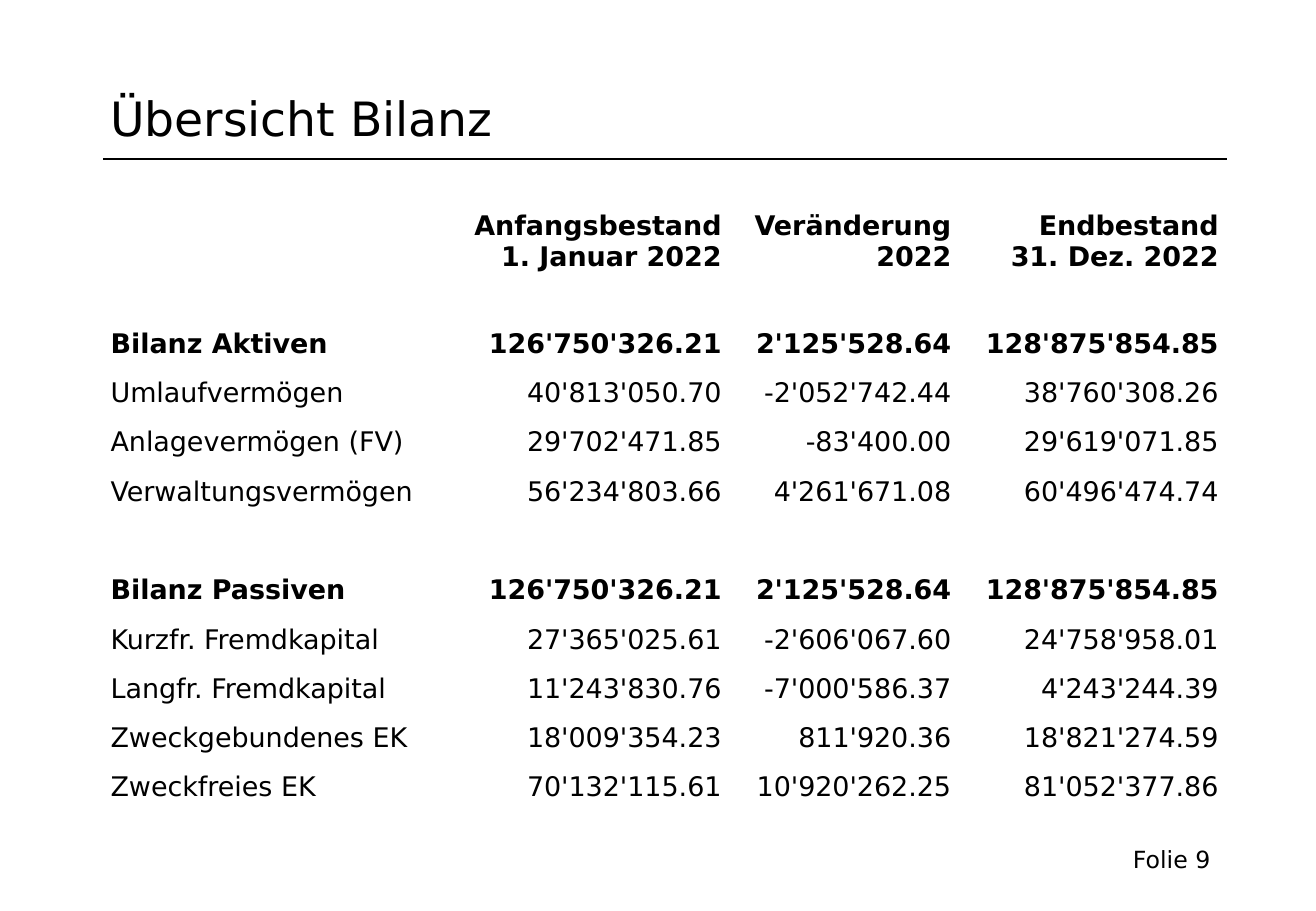
import pptx
import pptx.dml.color
import pptx.enum.shapes
import pptx.enum.text
import pptx.util
from lxml import etree

Inches = pptx.util.Inches
Align = pptx.enum.text.PP_ALIGN
Anchor = pptx.enum.text.MSO_ANCHOR

THEME = {
    "font": "DejaVu Sans",
    "ink": pptx.dml.color.RGBColor(0x00, 0x00, 0x00),
    "paper": pptx.dml.color.RGBColor(0xFF, 0xFF, 0xFF),
    "title": 28,
    "table": 16,
    "spacer": 14,
    "footer": 14,
}

LEFT, RIGHT = 0.81, 10.06
COLUMNS = [2.87, 2.36, 1.89, 2.2]
HEADER_ROW, SPACER_ROW, BODY_ROW = 0.62, 0.34, 0.406
TABLE_TOP = 1.68

HEADER = ["", "Anfangsbestand\n1. Januar 2022", "Veränderung\n2022", "Endbestand\n31. Dez. 2022"]
EMPTY = [""] * len(COLUMNS)
BALANCE = [
    HEADER,
    EMPTY,
    ["Bilanz Aktiven", "126'750'326.21", "2'125'528.64", "128'875'854.85"],
    ["Umlaufvermögen", "40'813'050.70", "-2'052'742.44", "38'760'308.26"],
    ["Anlagevermögen (FV)", "29'702'471.85", "-83'400.00", "29'619'071.85"],
    ["Verwaltungsvermögen", "56'234'803.66", "4'261'671.08", "60'496'474.74"],
    EMPTY,
    ["Bilanz Passiven", "126'750'326.21", "2'125'528.64", "128'875'854.85"],
    ["Kurzfr. Fremdkapital", "27'365'025.61", "-2'606'067.60", "24'758'958.01"],
    ["Langfr. Fremdkapital", "11'243'830.76", "-7'000'586.37", "4'243'244.39"],
    ["Zweckgebundenes EK", "18'009'354.23", "811'920.36", "18'821'274.59"],
    ["Zweckfreies EK", "70'132'115.61", "10'920'262.25", "81'052'377.86"],
]


def write(frame, text, size, align=Align.LEFT, bold=False):
    """Fill a text frame, one paragraph per line, in the theme's font."""
    frame.text = text
    for para in frame.paragraphs:
        para.alignment = align
        para.font.name = THEME["font"]
        para.font.size = pptx.util.Pt(size)
        para.font.bold = bold
        para.font.color.rgb = THEME["ink"]


def add_text(page, left, top, width, height, text, size, align=Align.LEFT):
    box = page.shapes.add_textbox(Inches(left), Inches(top), Inches(width), Inches(height))
    box.text_frame.word_wrap = True
    box.text_frame.vertical_anchor = Anchor.MIDDLE
    write(box.text_frame, text, size, align)


deck = pptx.Presentation()
deck.slide_width, deck.slide_height = Inches(10.83), Inches(7.5)
page = deck.slides.add_slide(deck.slide_layouts[6])

# Title and rule
rule = page.shapes.add_connector(
    pptx.enum.shapes.MSO_CONNECTOR.STRAIGHT,
    Inches(0.85), Inches(1.31), Inches(10.1), Inches(1.31),
)
rule.line.color.rgb = THEME["ink"]
rule.line.width = pptx.util.Pt(0.75)
etree.SubElement(rule.line._get_or_add_ln().getparent(), pptx.oxml.ns.qn("a:effectLst"))
add_text(page, LEFT, 0.68, 6.35, 0.58, "Übersicht Bilanz", THEME["title"])

# Balance table
heights = [HEADER_ROW, SPACER_ROW] + [BODY_ROW] * (len(BALANCE) - 2)
table = page.shapes.add_table(
    len(BALANCE), len(COLUMNS),
    Inches(LEFT), Inches(TABLE_TOP), Inches(sum(COLUMNS)), Inches(sum(heights)),
).table
table.horz_banding = False
for column, width in zip(table.columns, COLUMNS):
    column.width = Inches(width)

for row, height, entries in zip(table.rows, heights, BALANCE):
    row.height = Inches(height)
    bold = entries is HEADER or entries[0].startswith("Bilanz")
    size = THEME["spacer"] if entries is EMPTY else THEME["table"]
    for index, (cell, entry) in enumerate(zip(row.cells, entries)):
        cell.fill.solid()
        cell.fill.fore_color.rgb = THEME["paper"]
        write(cell.text_frame, entry, size, Align.RIGHT if index else Align.LEFT, bold)

# Page number
add_text(page, RIGHT - 1.02, 6.9, 1.02, 0.34, "Folie 9", THEME["footer"], Align.RIGHT)

deck.save("out.pptx")
